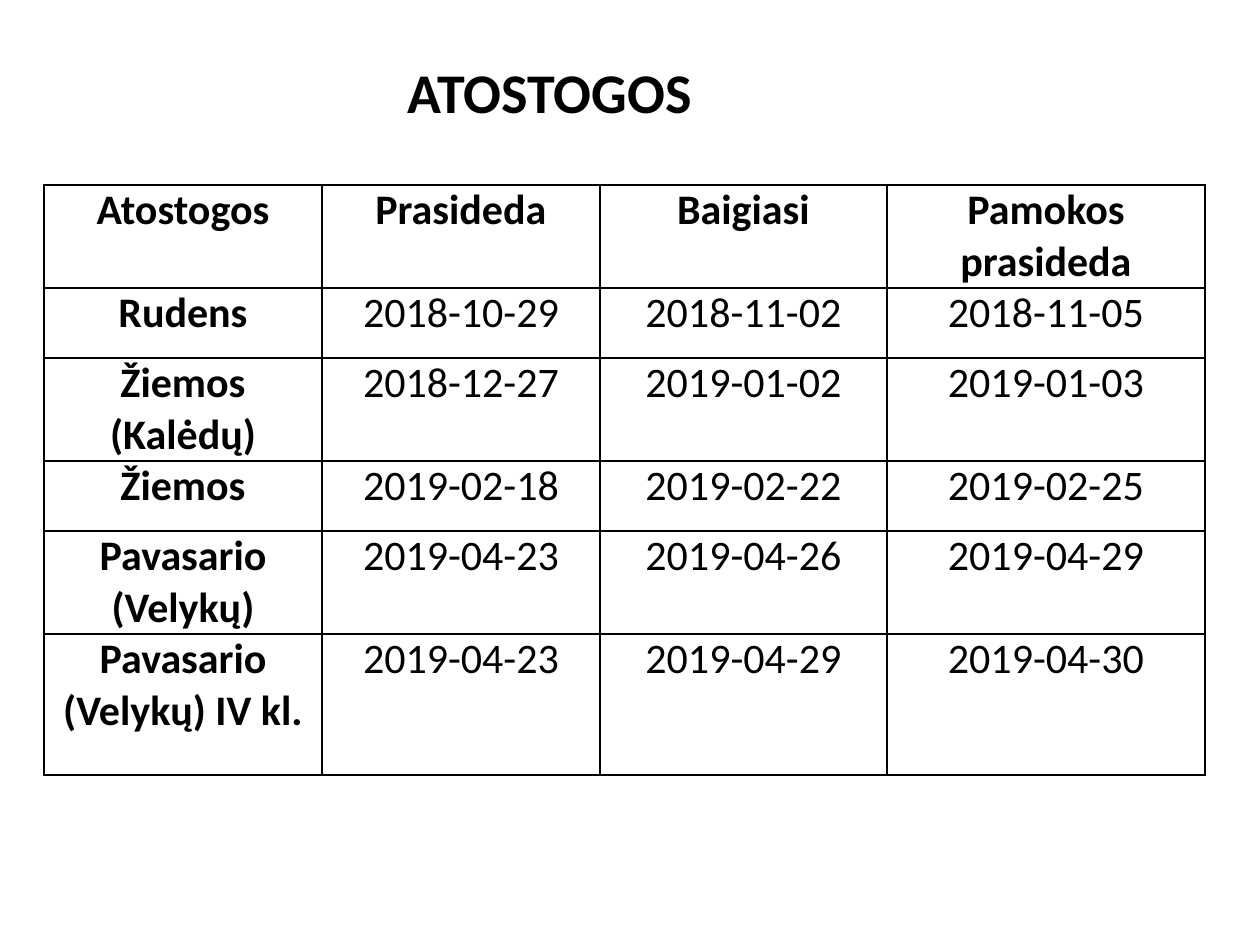
"""Build the school holiday timetable slide."""
from lxml import etree
from pptx import Presentation, util as u
from pptx.dml.color import RGBColor
from pptx.enum import text
from pptx.oxml import ns

PX = 914400 / 126
COLORS = {"ink": "000000", "paper": "FFFFFF"}
COLUMN_WIDTHS = [278, 278, 287, 318]
ROW_HEIGHTS = [103, 70, 103, 70, 103, 141]
HOLIDAYS = [
    ["Atostogos", "Prasideda", "Baigiasi", "Pamokos prasideda"],
    ["Rudens", "2018-10-29", "2018-11-02", "2018-11-05"],
    ["Žiemos (Kalėdų)", "2018-12-27", "2019-01-02", "2019-01-03"],
    ["Žiemos", "2019-02-18", "2019-02-22", "2019-02-25"],
    ["Pavasario (Velykų)", "2019-04-23", "2019-04-26", "2019-04-29"],
    ["Pavasario (Velykų) IV kl.", "2019-04-23", "2019-04-29", "2019-04-30"],
]


def px(length):
    return u.Emu(round(length * PX))


def format_text(text_frame, size, bold):
    paragraph = text_frame.paragraphs[0]
    paragraph.alignment = text.PP_ALIGN.CENTER
    font = paragraph.runs[0].font
    font.name = "Calibri"
    font.size = u.Pt(size)
    font.bold = bold
    font.color.rgb = RGBColor.from_string(COLORS["ink"])


presentation = Presentation()
presentation.slide_width, presentation.slide_height = px(1260), px(945)
slide = presentation.slides.add_slide(presentation.slide_layouts[5])
slide.background.fill.solid()
slide.background.fill.fore_color.rgb = RGBColor.from_string(COLORS["paper"])

title = slide.shapes.title
title.left, title.top, title.width, title.height = px(54), px(16), px(992), px(151)
title.text_frame.text = "ATOSTOGOS"
title.text_frame.vertical_anchor = text.MSO_ANCHOR.MIDDLE
format_text(title.text_frame, 32, True)

table = slide.shapes.add_table(
    len(ROW_HEIGHTS), len(COLUMN_WIDTHS),
    px(44), px(185), px(sum(COLUMN_WIDTHS)), px(sum(ROW_HEIGHTS)),
).table
for column, width in zip(table.columns, COLUMN_WIDTHS):
    column.width = px(width)
for row, height in zip(table.rows, ROW_HEIGHTS):
    row.height = px(height)

for row_index, holiday in enumerate(HOLIDAYS):
    for column_index, entry in enumerate(holiday):
        cell = table.cell(row_index, column_index)
        cell.margin_left = cell.margin_right = px(9)
        cell.margin_top = cell.margin_bottom = 0
        cell.vertical_anchor = text.MSO_ANCHOR.TOP
        cell.text_frame.text = entry
        format_text(cell.text_frame, 24, row_index == 0 or column_index == 0)
        properties = cell._tc.get_or_add_tcPr()
        for side in ("lnL", "lnR", "lnT", "lnB"):
            border = etree.SubElement(properties, ns.qn(f"a:{side}"), w=str(u.Pt(1)))
            fill = etree.SubElement(border, ns.qn("a:solidFill"))
            etree.SubElement(fill, ns.qn("a:srgbClr"), val=COLORS["ink"])
        cell.fill.background()

presentation.save("out.pptx")
